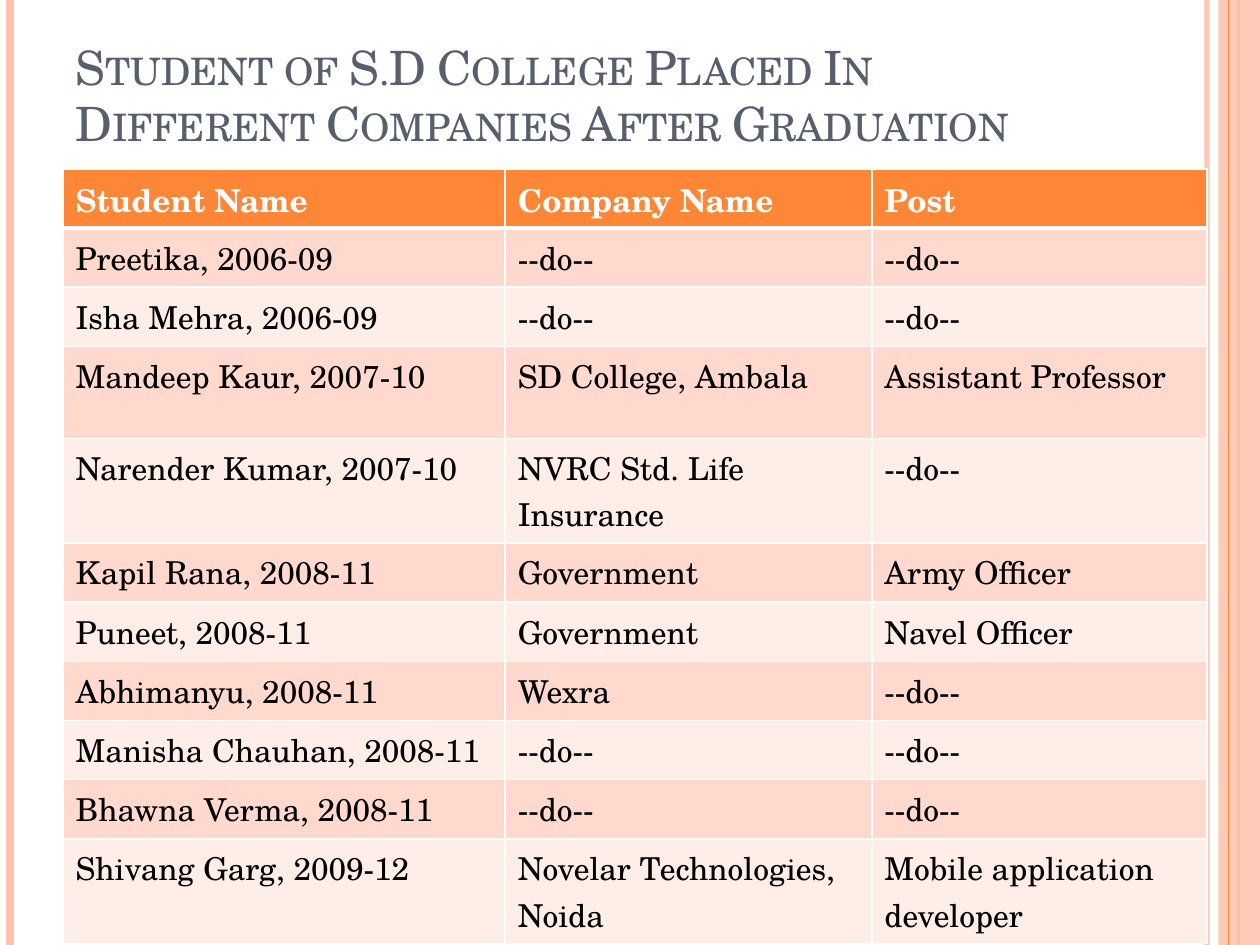
from lxml.etree import SubElement
from pptx import Presentation
from pptx.dml.color import RGBColor
from pptx.enum.shapes import MSO_CONNECTOR, MSO_SHAPE
from pptx.enum.text import MSO_ANCHOR
from pptx.oxml.ns import qn
from pptx.util import Inches, Pt

FONT = "TeX Gyre Schola"
ORANGE, PEACH, WHITE = "FE8637", "FEC3AE", "FFFFFF"
BAND_COLORS = ("FFD9CE", "FFEDE8")
TITLE = "Student of S.D College Placed In Different Companies After Graduation"

COLUMN_WIDTHS = (3.51, 2.91, 2.66)
ROW_HEIGHT = 0.47
TALL_ROW_HEIGHTS = {3: 0.73, 4: 0.83, 10: 0.83}
SAME = "--do--"
ROWS = (
    ("Student Name", "Company Name", "Post"),
    ("Preetika, 2006-09", SAME, SAME),
    ("Isha Mehra, 2006-09", SAME, SAME),
    ("Mandeep Kaur, 2007-10", "SD College, Ambala", "Assistant Professor"),
    ("Narender Kumar, 2007-10", "NVRC Std. Life Insurance", SAME),
    ("Kapil Rana, 2008-11", "Government", "Army Officer"),
    ("Puneet, 2008-11", "Government", "Navel Officer"),
    ("Abhimanyu, 2008-11", "Wexra", SAME),
    ("Manisha Chauhan, 2008-11", SAME, SAME),
    ("Bhawna Verma, 2008-11", SAME, SAME),
    ("Shivang Garg, 2009-12", "Novelar Technologies, Noida",
     "Mobile application developer"),
)


def color(hex_string):
    return RGBColor.from_string(hex_string)


def set_opacity(fill_parent, percent):
    color_element = fill_parent.find(qn("a:solidFill"))[0]
    SubElement(color_element, qn("a:alpha"), val=str(percent * 1000))


def add_run(paragraph, text, size, hex_string, bold=False):
    run = paragraph.add_run()
    run.text = text
    font = run.font
    font.name, font.size, font.bold = FONT, Pt(size), bold
    font.color.rgb = color(hex_string)
    return run


def add_vertical_line(slide, x, hex_string, width, opacity=100):
    line = slide.shapes.add_connector(
        MSO_CONNECTOR.STRAIGHT, Inches(x), Inches(0), Inches(x), Inches(7.5))
    line.line.color.rgb = color(hex_string)
    line.line.width = Pt(width)
    properties = line._element.spPr
    if opacity < 100:
        set_opacity(properties.find(qn("a:ln")), opacity)
    SubElement(properties, qn("a:effectLst"))


def add_side_band(slide):
    shape = slide.shapes.add_shape(
        MSO_SHAPE.RECTANGLE, Inches(9.67), Inches(0), Inches(0.33), Inches(7.5))
    shape.shadow.inherit = False
    shape.fill.solid()
    shape.fill.fore_color.rgb = color(PEACH)
    set_opacity(shape._element.spPr, 87)
    shape.line.fill.background()


def add_title(slide):
    box = slide.shapes.add_textbox(
        Inches(0.5), Inches(0), Inches(8.17), Inches(1.25))
    frame = box.text_frame
    frame.word_wrap = True
    frame.vertical_anchor = MSO_ANCHOR.BOTTOM
    run = add_run(frame.paragraphs[0], TITLE, 27, "575F6D")
    run.font._element.set("cap", "small")


def set_borders(cell, top, bottom):
    properties = cell._tc.get_or_add_tcPr()
    for side, width in (("L", 1), ("R", 1), ("T", top), ("B", bottom)):
        border = SubElement(properties, qn(f"a:ln{side}"), w=str(Pt(width)))
        fill = SubElement(border, qn("a:solidFill"))
        SubElement(fill, qn("a:srgbClr"), val=WHITE)


def add_placement_table(slide):
    heights = [TALL_ROW_HEIGHTS.get(index, ROW_HEIGHT)
               for index in range(len(ROWS))]
    table = slide.shapes.add_table(
        len(ROWS), len(COLUMN_WIDTHS), Inches(0.5), Inches(1.34),
        Inches(sum(COLUMN_WIDTHS)), Inches(sum(heights))).table
    for column, width in zip(table.columns, COLUMN_WIDTHS):
        column.width = Inches(width)
    for index, (row, height, texts) in enumerate(zip(table.rows, heights, ROWS)):
        row.height = Inches(height)
        header = index == 0
        for cell, text in zip(row.cells, texts):
            # The rule under the header is shared by the first two rows
            set_borders(cell, 3 if index == 1 else 1, 3 if header else 1)
            cell.fill.solid()
            cell.fill.fore_color.rgb = color(
                ORANGE if header else BAND_COLORS[(index - 1) % 2])
            add_run(cell.text_frame.paragraphs[0], text, 18,
                    WHITE if header else "000000", header)


def main():
    presentation = Presentation()
    presentation.slide_width = Inches(10)
    presentation.slide_height = Inches(7.5)
    slide = presentation.slides.add_slide(presentation.slide_layouts[6])

    # Edge decoration
    add_vertical_line(slide, 9.58, PEACH, 3, 93)
    add_vertical_line(slide, 0.08, PEACH, 4.5)
    add_vertical_line(slide, 9.83, ORANGE, 1.5)
    add_side_band(slide)
    add_vertical_line(slide, 9.75, ORANGE, 0.75)

    # Content
    add_title(slide)
    add_placement_table(slide)

    presentation.save("out.pptx")


if __name__ == "__main__":
    main()
